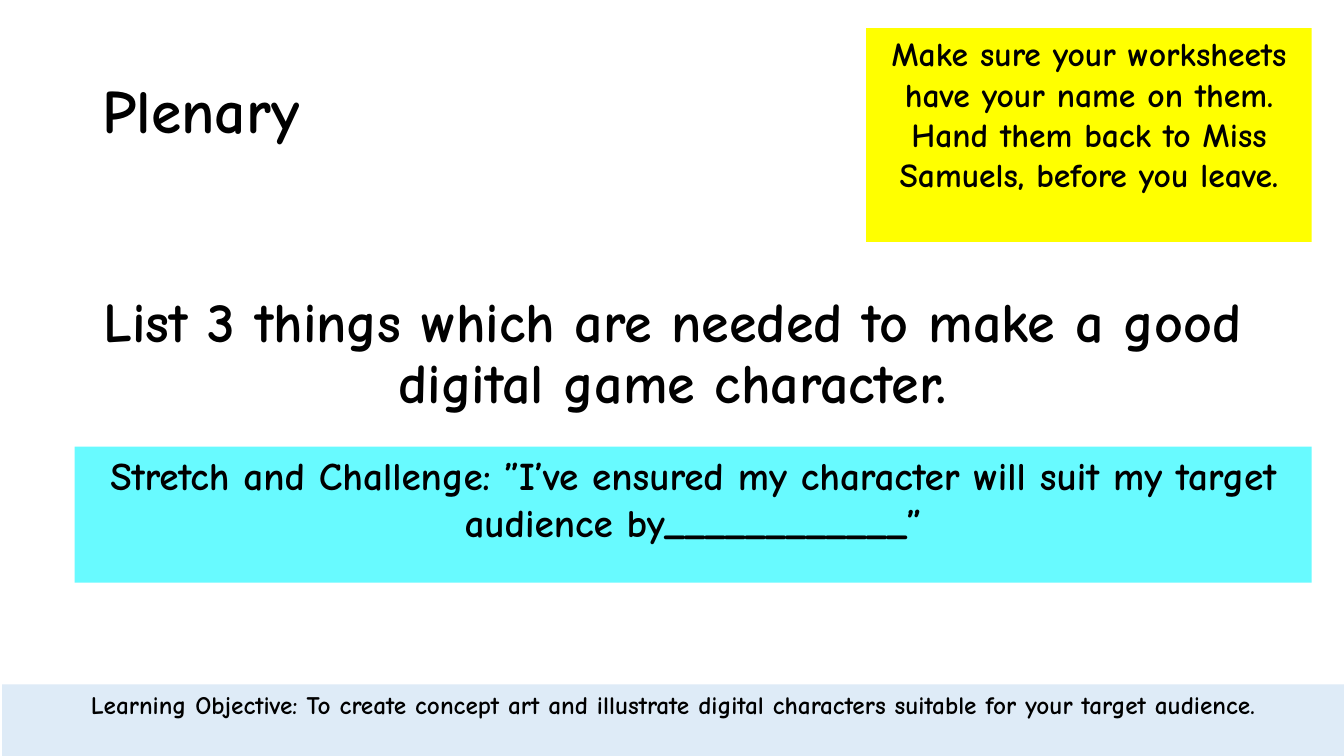
from pptx import Presentation
from pptx.dml.color import RGBColor
from pptx.enum.shapes import MSO_SHAPE
from pptx.enum.text import MSO_ANCHOR, PP_ALIGN
from pptx.util import Inches, Pt

RECT = MSO_SHAPE.RECTANGLE
TOP, MIDDLE = MSO_ANCHOR.TOP, MSO_ANCHOR.MIDDLE
LEFT, CENTER = PP_ALIGN.LEFT, PP_ALIGN.CENTER
FONT = "Comic Neue"


def color(code):
    return RGBColor.from_string(code)


def write(shape, text, size, align=CENTER, anchor=TOP, spacing=1.0):
    frame = shape.text_frame
    frame.word_wrap = True
    frame.vertical_anchor = anchor
    frame.text = text
    para = frame.paragraphs[0]
    para.alignment = align
    para.line_spacing = spacing
    font = para.runs[0].font
    font.name = FONT
    font.size = Pt(size)
    font.bold = True
    font.color.rgb = color("000000")


def add_text(slide, box, text, size, **style):
    shape = slide.shapes.add_textbox(*map(Inches, box))
    write(shape, text, size, spacing=0.9, **style)


def add_panel(slide, box, fill, text, size):
    shape = slide.shapes.add_shape(RECT, *map(Inches, box))
    shape.shadow.inherit = False
    shape.fill.solid()
    shape.fill.fore_color.rgb = color(fill)
    shape.line.fill.background()
    write(shape, text, size)


def main():
    deck = Presentation()
    deck.slide_width = Inches(13.33)
    deck.slide_height = Inches(7.5)
    slide = deck.slides.add_slide(deck.slide_layouts[6])

    add_text(slide, (0.92, 0.4, 11.5, 1.45), "Plenary", 44,
             align=LEFT, anchor=MIDDLE)
    add_text(slide, (0.92, 2.87, 11.5, 1.54),
             "List 3 things which are needed to make a good "
             "digital game character.", 40)
    add_panel(slide, (8.59, 0.28, 4.42, 2.12), "FFFF00",
              "Make sure your worksheets have your name on them. "
              "Hand them back to Miss Samuels, before you leave.", 24)
    add_panel(slide, (0.02, 6.79, 13.31, 0.71), "DEEBF7",
              "Learning Objective: To create concept art and illustrate "
              "digital characters suitable for your target audience.", 18)
    add_panel(slide, (0.74, 4.43, 12.27, 1.35), "68FAFF",
              "Stretch and Challenge: ”I’ve ensured my character will suit "
              "my target audience by____________”", 28)
    deck.save("out.pptx")


if __name__ == "__main__":
    main()
